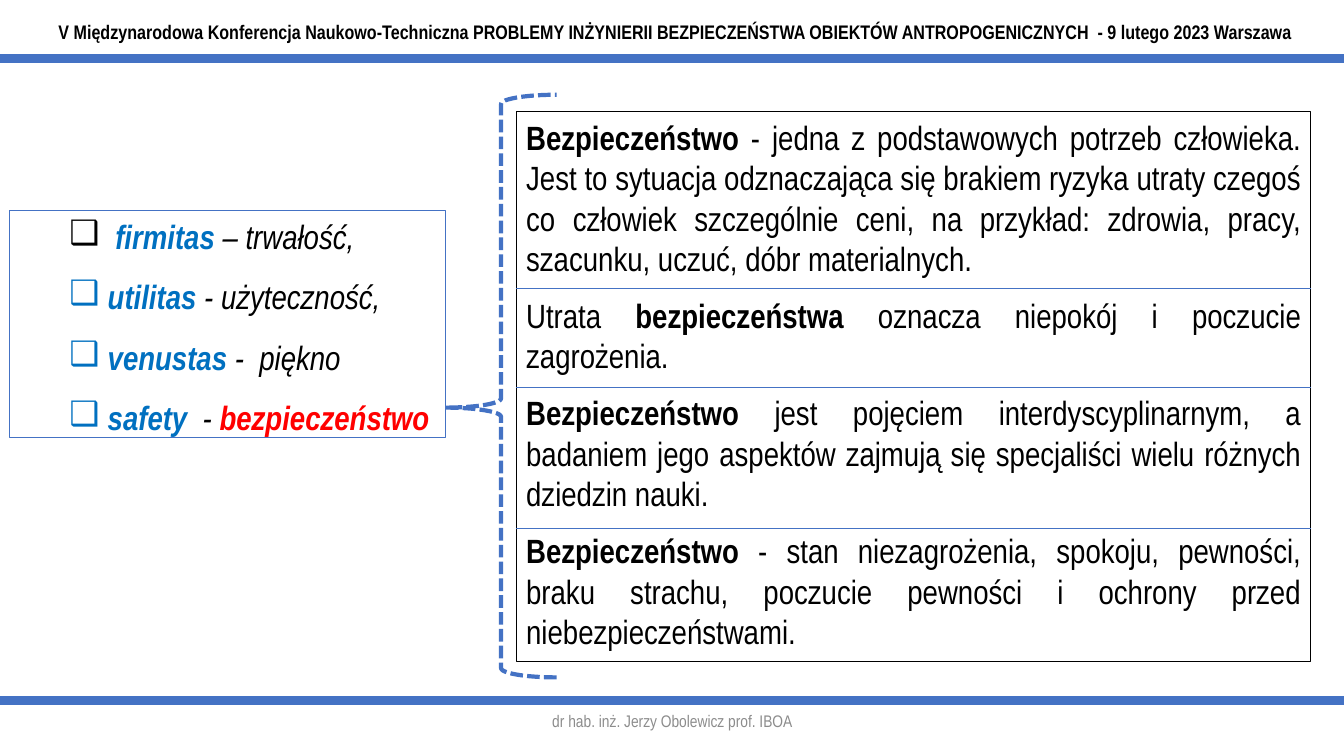
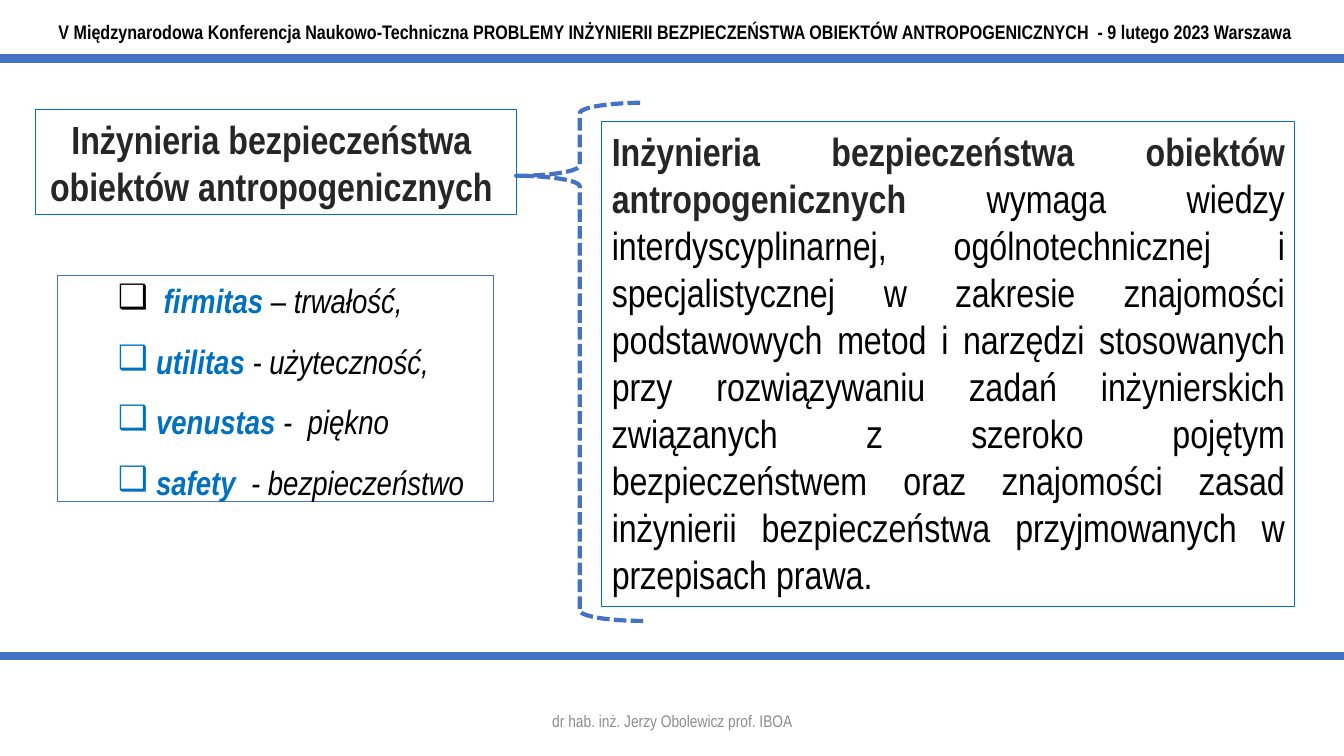
"""Build two slides on the safety of anthropogenic structures."""
from dataclasses import dataclass

from lxml.etree import SubElement
from pptx import Presentation
from pptx.dml.color import RGBColor as RGB
from pptx.enum.dml import MSO_LINE
from pptx.enum.shapes import MSO_CONNECTOR as CONNECTOR, MSO_SHAPE as SHAPE
from pptx.enum.text import MSO_ANCHOR as ANCHOR, PP_ALIGN as ALIGN
from pptx.oxml.ns import qn
from pptx.util import Inches, Pt


@dataclass(frozen=True)
class Theme:
    """Colours, font and type sizes shared by the slides."""
    font: str = "Arial Narrow"
    black: str = "000000"
    dark: str = "262626"
    grey: str = "8C8C8C"
    white: str = "FFFFFF"
    blue: str = "4472C4"
    accent: str = "0070C0"
    red: str = "FF0000"
    footer: int = 12
    header: int = 14
    body: int = 24
    title: int = 28


THEME = Theme()
WIDTH, HEIGHT = 13.33, 7.5
HEADER = ("V Międzynarodowa Konferencja Naukowo-Techniczna PROBLEMY INŻYNIERII "
          "BEZPIECZEŃSTWA OBIEKTÓW ANTROPOGENICZNYCH  - 9 lutego 2023 Warszawa ")
FOOTER = "dr hab. inż. Jerzy Obolewicz prof. IBOA"

PLAIN = {"size": THEME.body, "color": THEME.black}
BOLD = {**PLAIN, "bold": True}
ITALIC = {**PLAIN, "italic": True}
TERM = {**ITALIC, "bold": True, "color": THEME.accent}
ALERT = {**TERM, "color": THEME.red}
TITLE = {"size": THEME.title, "bold": True, "color": THEME.dark}
LARGE = {"size": THEME.title, "color": THEME.black}
HEADER_STYLE = {"size": THEME.header, "bold": True, "color": THEME.black}
FOOTER_STYLE = {"size": THEME.footer, "color": THEME.grey}

QUALITIES = [
    [(" ", ITALIC), ("firmitas", TERM), (" – trwałość,", ITALIC)],
    [("utilitas ", TERM), ("- użyteczność,", ITALIC)],
    [("venustas", TERM), (" -  piękno", ITALIC)],
]
DEFINITIONS = [
    [("Bezpieczeństwo ", BOLD),
     ("- jedna z podstawowych potrzeb człowieka. Jest to sytuacja odznaczająca się "
      "brakiem ryzyka utraty czegoś co człowiek szczególnie ceni, na przykład: "
      "zdrowia, pracy, szacunku, uczuć, dóbr materialnych. ", PLAIN)],
    [("Utrata", PLAIN), (" bezpieczeństwa ", BOLD),
     ("oznacza niepokój i poczucie zagrożenia.", PLAIN)],
    [("Bezpieczeństwo", BOLD),
     (" jest pojęciem interdyscyplinarnym, a badaniem jego aspektów zajmują się "
      "specjaliści wielu różnych dziedzin nauki.", PLAIN)],
    [("Bezpieczeństwo", BOLD),
     (" - stan niezagrożenia, spokoju, pewności, braku strachu, poczucie pewności "
      "i ochrony przed niebezpieczeństwami. ", PLAIN)],
]
DISCIPLINE = [
    [("Inżynieria bezpieczeństwa ", TITLE)],
    [("obiektów antropogenicznych ", TITLE)],
]
REQUIREMENTS = [
    [("Inżynieria bezpieczeństwa obiektów antropogenicznych ", TITLE),
     ("wymaga wiedzy interdyscyplinarnej, ogólnotechnicznej i specjalistycznej w "
      "zakresie znajomości podstawowych metod i narzędzi stosowanych przy "
      "rozwiązywaniu zadań inżynierskich związanych z szeroko pojętym "
      "bezpieczeństwem oraz znajomości zasad inżynierii bezpieczeństwa "
      "przyjmowanych w przepisach prawa. ", LARGE)],
]


def set_values(target, values):
    """Set each named value as an attribute of the target."""
    for name, value in values.items():
        setattr(target, name, value)


def add_run(paragraph, text, style):
    """Add one styled run to a paragraph."""
    run = paragraph.add_run()
    run.text = text
    values = {"name": THEME.font, "bold": False, "italic": False, **style}
    run.font.color.rgb = RGB.from_string(values.pop("color"))
    set_values(run.font, {**values, "size": Pt(values["size"])})


def add_bullet(paragraph):
    """Give a paragraph a square bullet with a hanging indent."""
    properties = paragraph._p.get_or_add_pPr()
    properties.set("marL", str(Inches(0.88)))
    properties.set("indent", str(Inches(-0.38)))
    SubElement(properties, qn("a:buFont"), typeface=THEME.font)
    SubElement(properties, qn("a:buChar"), char="❑")


def write(shape, paragraphs, first, following=None, bulleted=False):
    """Fill a shape with paragraphs; later ones may add to the first format."""
    frame = shape.text_frame
    set_values(frame, {"word_wrap": True})
    for index, runs in enumerate(paragraphs):
        paragraph = frame.add_paragraph() if index else frame.paragraphs[0]
        set_values(paragraph, {**first, **(following or {})} if index else first)
        if bulleted:
            add_bullet(paragraph)
        for text, style in runs:
            add_run(paragraph, text, style)


def add_label(slide, box, text, style, anchor):
    """Add a centred line of text."""
    label = slide.shapes.add_textbox(*map(Inches, box))
    label.text_frame.vertical_anchor = anchor
    write(label, [[(text, style)]], {"alignment": ALIGN.CENTER})


def add_outline(slide, kind, box, color, width=0.75, fill=None):
    """Add a preset shape with an outline and an optional fill."""
    shape = slide.shapes.add_shape(kind, *map(Inches, box))
    shape.shadow.inherit = False
    if fill:
        shape.fill.solid()
        shape.fill.fore_color.rgb = RGB.from_string(fill)
    else:
        shape.fill.background()
    shape.line.color.rgb = RGB.from_string(color)
    shape.line.width = Pt(width)
    return shape


def add_panel(slide, box, color, paragraphs, alignment, following=None):
    """Add an outlined panel of text."""
    panel = add_outline(slide, SHAPE.RECTANGLE, box, color)
    panel.text_frame.vertical_anchor = ANCHOR.TOP
    write(panel, paragraphs, {"alignment": alignment}, following)


def add_qualities(slide, left, top, safety):
    """Add the bulleted list of qualities, closed by the safety entry."""
    box = (left, top, 4.33, 2.25)
    panel = add_outline(slide, SHAPE.RECTANGLE, box, THEME.blue, fill=THEME.white)
    panel.text_frame.vertical_anchor = ANCHOR.TOP
    write(panel, [*QUALITIES, [("safety", TERM), *safety]],
          {"level": 1, "alignment": ALIGN.LEFT}, {"line_spacing": 1.5}, bulleted=True)


def add_brace(slide, box, point):
    """Add a dashed left brace whose tip sits at a share of its height."""
    brace = add_outline(slide, SHAPE.LEFT_BRACE, box, THEME.blue, 3)
    brace.line.dash_style = MSO_LINE.SQUARE_DOT
    brace.adjustments[0] = 0.083
    brace.adjustments[1] = point


def add_rule(slide, left, right, top, width):
    """Add a horizontal line."""
    ends = map(Inches, (left, top, right, top))
    rule = slide.shapes.add_connector(CONNECTOR.STRAIGHT, *ends)
    rule.line.color.rgb = RGB.from_string(THEME.blue)
    rule.line.width = Pt(width)
    SubElement(rule._element.spPr, qn("a:effectLst"))


def add_slide(presentation, bottom_band):
    """Add a blank slide with its header, footer and two bands."""
    slide = presentation.slides.add_slide(presentation.slide_layouts[6])
    add_label(slide, (4.42, 6.95, 4.5, 0.4), FOOTER, FOOTER_STYLE, ANCHOR.MIDDLE)
    add_label(slide, (0.35, 0.15, 12.75, 0.34), HEADER, HEADER_STYLE, ANCHOR.TOP)
    for top in (0.58, bottom_band):
        add_rule(slide, 0, WIDTH, top, 6)
    return slide


def add_definitions_slide(presentation):
    """Add the slide that defines safety."""
    slide = add_slide(presentation, 6.95)
    add_qualities(slide, 0.09, 2.09, [("  -", ITALIC), (" bezpieczeństwo", ALERT)])
    add_brace(slide, (4.42, 0.94, 1.1, 5.78), 0.537)
    left, width = 5.12, 7.88
    add_panel(slide, (left, 1.11, width, 5.45), THEME.black, DEFINITIONS,
              ALIGN.JUSTIFY, {"space_before": Pt(12)})
    for top in (2.86, 3.84, 5.24):
        add_rule(slide, left, left + width, top, 0.5)


def add_requirements_slide(presentation):
    """Add the slide on the knowledge that safety engineering requires."""
    slide = add_slide(presentation, 6.51)
    add_qualities(slide, 0.57, 2.73, [("  - bezpieczeństwo", ITALIC)])
    add_brace(slide, (5.12, 1.02, 1.26, 5.14), 0.141)
    add_panel(slide, (0.35, 1.09, 4.77, 1.04), THEME.accent, DISCIPLINE, ALIGN.CENTER)
    add_panel(slide, (5.97, 1.21, 6.87, 4.81), THEME.accent, REQUIREMENTS,
              ALIGN.JUSTIFY)


def main():
    """Build and save the presentation."""
    presentation = Presentation()
    set_values(presentation, {"slide_width": Inches(WIDTH),
                              "slide_height": Inches(HEIGHT)})
    add_definitions_slide(presentation)
    add_requirements_slide(presentation)
    presentation.save("out.pptx")


if __name__ == "__main__":
    main()
